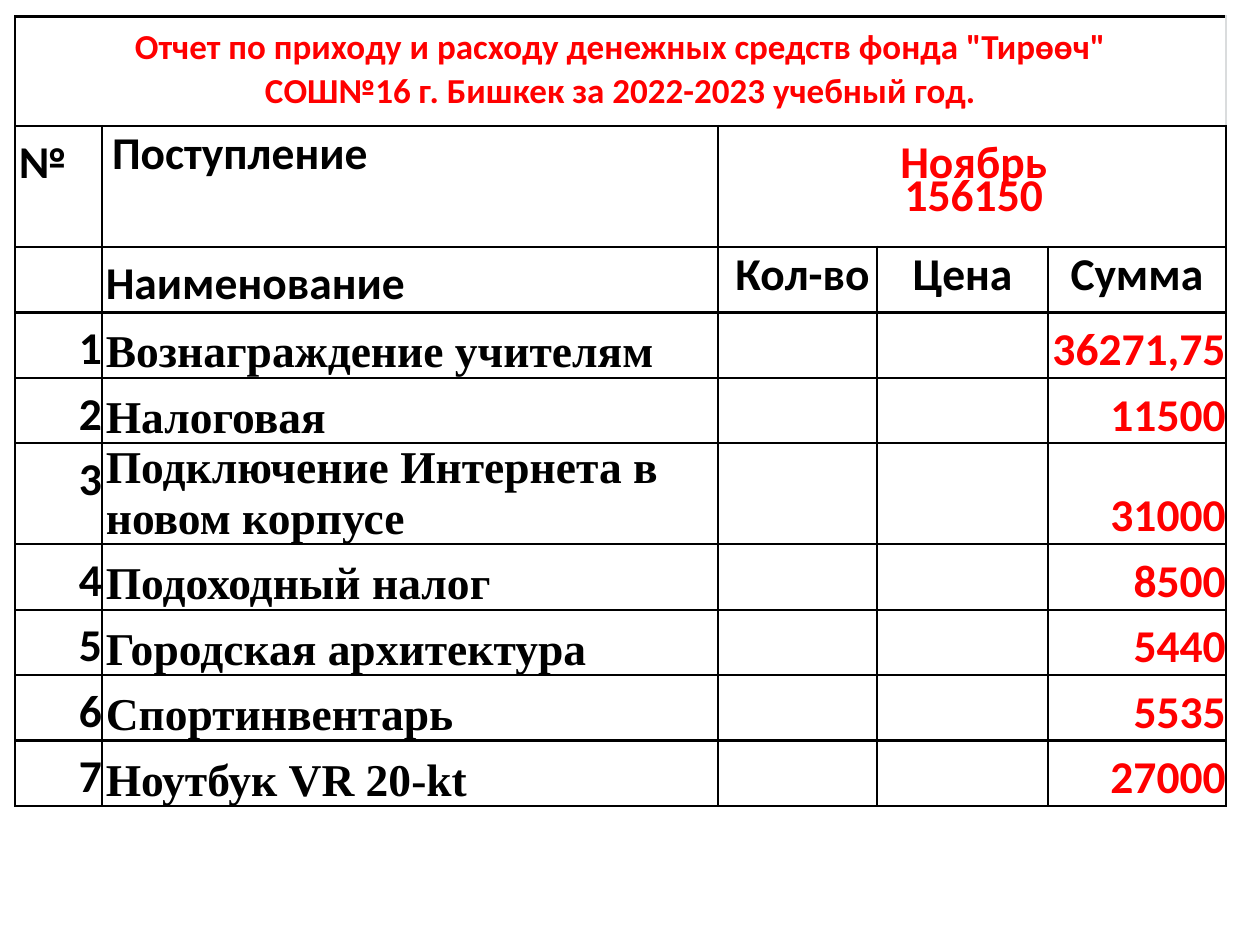
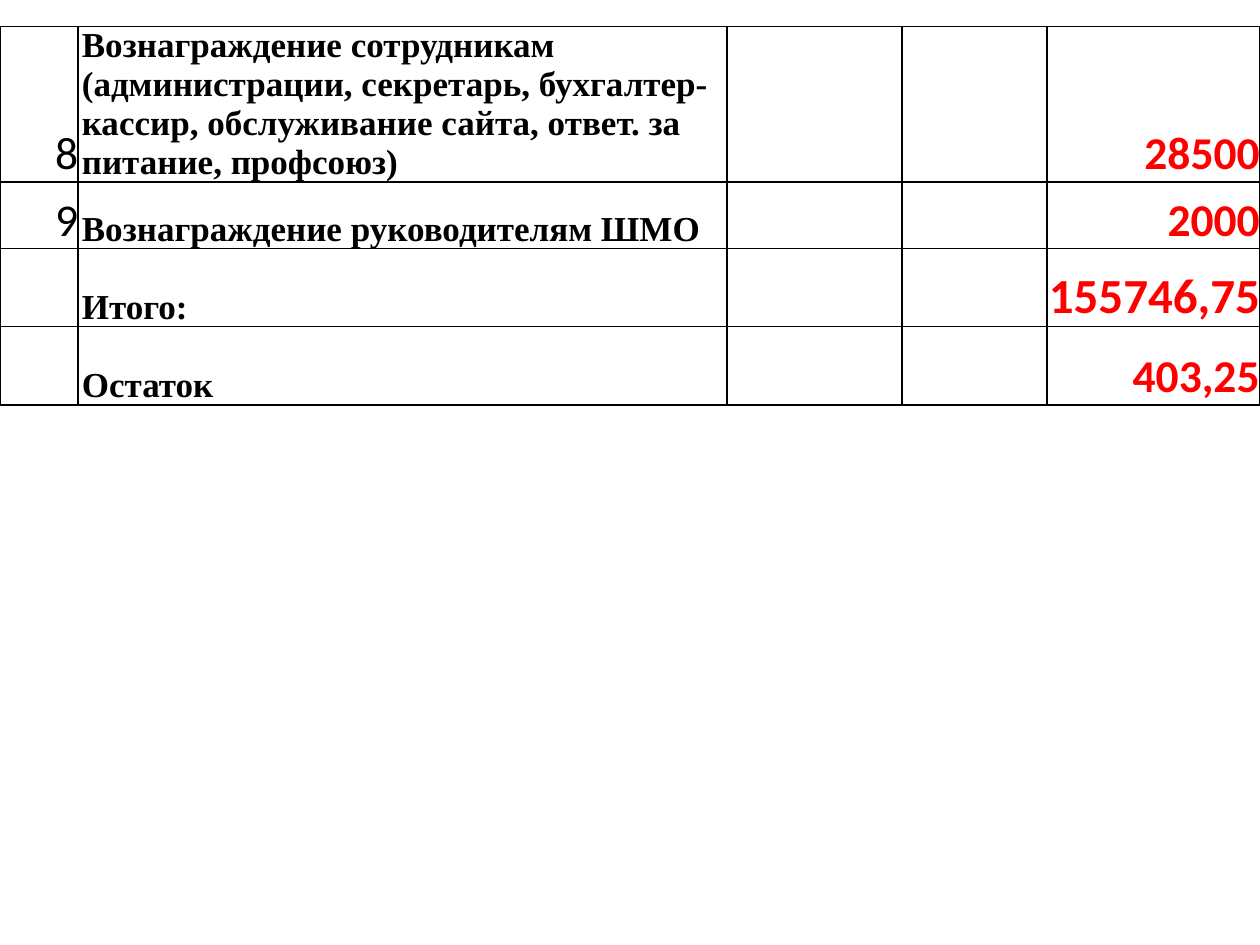
"""Build a two-slide income and expense report of a school fund."""
from dataclasses import dataclass

from lxml import etree
from pptx import Presentation, util as u
from pptx.dml.color import RGBColor
from pptx.enum import text
from pptx.oxml import ns


@dataclass(frozen=True)
class Theme:
    ink: str = "000000"
    accent: str = "FF0000"
    paper: str = "FFFFFF"
    faint: str = "DADCDD"
    sans: str = "Calibri"
    serif: str = "Times New Roman"
    small: int = 20
    body: int = 26
    total: int = 28
    thin: float = 1
    thick: float = 1.5
    indent: float = 0.03
    drop: float = 0.07


theme = Theme()
left, center, right = text.PP_ALIGN.LEFT, text.PP_ALIGN.CENTER, text.PP_ALIGN.RIGHT
top, bottom = text.MSO_ANCHOR.TOP, text.MSO_ANCHOR.BOTTOM


def add_grid(slide, origin, columns, rows, horizontal, vertical):
    """Add a white table; vertical lists the line widths from left to right."""
    table = slide.shapes.add_table(
        len(rows), len(columns), u.Inches(origin[0]), u.Inches(origin[1]),
        u.Inches(sum(columns)), u.Inches(sum(rows))).table
    table.first_row = table.horz_banding = False
    for column, width in zip(table.columns, columns):
        column.width = u.Inches(width)
    for row, height in zip(table.rows, rows):
        row.height = u.Inches(height)
        for index, cell in enumerate(row.cells):
            cell.margin_left = cell.margin_right = 0
            cell.margin_top = cell.margin_bottom = 0
            sides = {"L": vertical[index], "R": vertical[index + 1], "T": horizontal, "B": horizontal}
            for side, width in sides.items():
                line = etree.SubElement(cell._tc.get_or_add_tcPr(), ns.qn(f"a:ln{side}"), w=str(u.Pt(width)))
                fill = etree.SubElement(line, ns.qn("a:solidFill"))
                etree.SubElement(fill, ns.qn("a:srgbClr"), val=theme.ink)
            cell.fill.solid()
            cell.fill.fore_color.rgb = RGBColor.from_string(theme.paper)
    return table


def write(cell, words, align=left, anchor=top, size=theme.body, font=theme.sans,
          color=theme.ink, bold=True, margin_left=0, margin_top=0, leading=None):
    """Fill a cell and format its runs."""
    cell.text_frame.text = words
    cell.vertical_anchor = anchor
    cell.margin_left, cell.margin_top = u.Inches(margin_left), u.Inches(margin_top)
    for paragraph in cell.text_frame.paragraphs:
        paragraph.alignment = align
        paragraph.space_before = u.Pt(0.7)
        if leading:
            paragraph.line_spacing = u.Pt(leading)
        for run in paragraph.runs:
            run.font.size, run.font.name, run.font.bold = u.Pt(size), font, bold
            run.font.color.rgb = RGBColor.from_string(color)


presentation = Presentation()
presentation.slide_width, presentation.slide_height = u.Inches(10), u.Inches(7.5)
blank = presentation.slide_layouts[6]

expenses = [
    ("1", "Вознаграждение учителям", "36271,75"),
    ("2", "Налоговая", "11500"),
    ("3", "Подключение Интернета в новом корпусе", "31000"),
    ("4", "Подоходный налог", "8500"),
    ("5", "Городская архитектура", "5440"),
    ("6", "Спортинвентарь", "5535"),
    ("7", "Ноутбук VR 20-kt", "27000"),
]
line_height, double_height = 0.52, 0.8
expense_heights = [double_height if number == "3" else line_height for number, _, _ in expenses]
report = add_grid(
    presentation.slides.add_slide(blank), (0.12, 0.13), [0.69, 4.89, 1.26, 1.36, 1.41],
    [0.87, 0.96, line_height, *expense_heights], theme.thick,
    [theme.thin, theme.thin, theme.thin, theme.thick, theme.thin, theme.thin])
for column in range(5):
    edge = report.cell(0, column)._tc.tcPr.find(ns.qn("a:lnR"))
    edge.find(".//" + ns.qn("a:srgbClr")).set("val", theme.faint)
report.cell(0, 0).merge(report.cell(0, 4))
report.cell(1, 2).merge(report.cell(1, 4))

write(report.cell(0, 0),
      'Отчет по приходу и расходу денежных средств фонда "Тирөөч"\n'
      "СОШ№16 г. Бишкек за 2022-2023 учебный год.",
      center, size=theme.small, color=theme.accent, margin_top=0.08)
write(report.cell(1, 0), "№", margin_left=theme.indent, margin_top=theme.drop)
write(report.cell(1, 1), "Поступление", margin_left=0.08)
write(report.cell(1, 2), "Ноябрь\n156150", center, color=theme.accent,
      margin_left=theme.indent, margin_top=0.26, leading=18.3)
write(report.cell(2, 1), "Наименование", margin_left=theme.indent, margin_top=theme.drop)
for column, (heading, shift) in enumerate([("Кол-во", 0.08), ("Цена", 0), ("Сумма", 0)], 2):
    write(report.cell(2, column), heading, center, margin_left=shift)
for row, (number, purpose, amount) in enumerate(expenses, 3):
    write(report.cell(row, 0), number, right, margin_top=theme.drop)
    write(report.cell(row, 1), purpose, anchor=bottom, font=theme.serif, margin_left=theme.indent)
    write(report.cell(row, 4), amount, right, bottom, color=theme.accent)

closing = [
    ("8", "Вознаграждение сотрудникам (администрации, секретарь, бухгалтер-кассир, "
          "обслуживание сайта, ответ. за питание, профсоюз)", "28500", theme.body),
    ("9", "Вознаграждение руководителям ШМО", "2000", theme.body),
    ("", "Итого:", "155746,75", theme.total),
    ("", "Остаток", "403,25", theme.body),
]
summary = add_grid(
    presentation.slides.add_slide(blank), (0, 0.21), [0.62, 5.15, 1.39, 1.15, 1.69],
    [1.23, 0.53, 0.62, 0.62], theme.thin, [theme.thin] * 6)
for row, (number, purpose, amount, size) in enumerate(closing):
    write(summary.cell(row, 0), number, right, bottom, bold=False)
    write(summary.cell(row, 1), purpose, anchor=bottom, size=theme.small,
          font=theme.serif, margin_left=theme.indent)
    write(summary.cell(row, 4), amount, right, bottom, size=size, color=theme.accent)

presentation.save("out.pptx")
